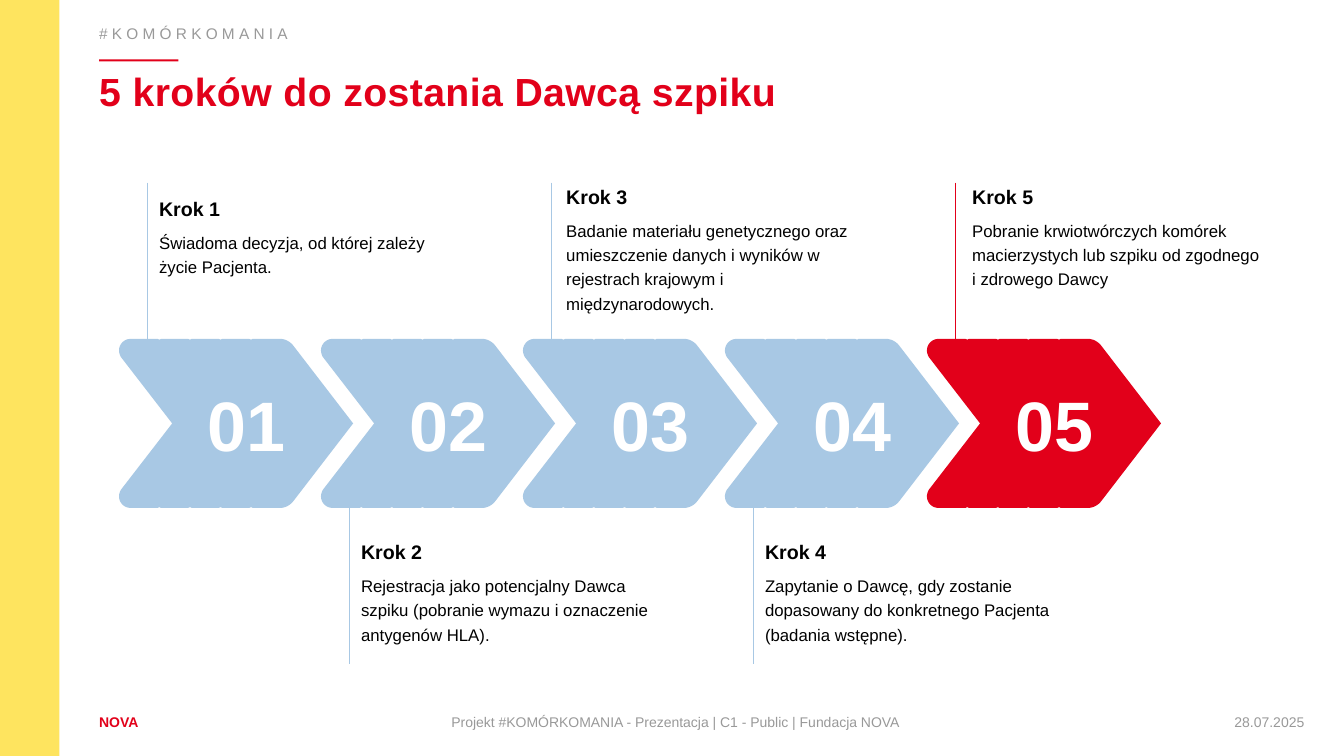
"""Build the slide with the five steps to becoming a marrow donor."""
from dataclasses import dataclass

from lxml import etree
from pptx import Presentation
from pptx import util as u
from pptx.dml.color import RGBColor
from pptx.enum import shapes, text
from pptx.oxml import ns


@dataclass(frozen=True)
class Theme:
    font: str = "Arial"
    yellow: str = "FEE45F"
    red: str = "E2001A"
    blue: str = "A8C8E4"
    grey: str = "999999"
    white: str = "FFFFFF"
    black: str = "000000"
    title: float = 28
    number: float = 50
    heading: float = 14
    body: float = 12
    eyebrow: float = 11
    footer: float = 10


T = Theme()
LEFT, TOP, HEIGHT, PITCH = 3.0, 8.54, 4.26, 5.09
STEM_X, STEM_LENGTH = 0.71, 3.94


def write(sp, lines, margins=(0, 0, 0, 0), anchor="TOP", align="LEFT"):
    """Fill a shape with (text, size, colour, bold) paragraphs."""
    tf = sp.text_frame
    tf.word_wrap = True
    tf.auto_size = text.MSO_AUTO_SIZE.NONE
    tf.vertical_anchor = text.MSO_ANCHOR[anchor]
    tf.margin_left, tf.margin_top, tf.margin_right, tf.margin_bottom = map(u.Cm, margins)
    for i, (words, size, colour, bold) in enumerate(lines):
        p = tf.add_paragraph() if i else tf.paragraphs[0]
        p.text = words
        p.alignment = text.PP_ALIGN[align]
        p.font.name, p.font.size, p.font.bold = T.font, u.Pt(size), bold
        p.font.color.rgb = RGBColor.from_string(colour)
    return tf.paragraphs


def paint(sp, colour):
    """Give a shape a plain fill without line or shadow."""
    sp.shadow.inherit = False
    sp.fill.solid()
    sp.fill.fore_color.rgb = RGBColor.from_string(colour)
    sp.line.fill.background()


prs = Presentation()
prs.slide_width, prs.slide_height = u.Cm(33.87), u.Cm(19.05)
s = prs.slides.add_slide(prs.slide_layouts[1])
s.background.fill.solid()
s.background.fill.fore_color.rgb = RGBColor.from_string(T.yellow)

title, eyebrow = s.shapes.title, s.placeholders[1]
panel = s.shapes.add_shape(shapes.MSO_SHAPE.RECTANGLE, u.Cm(1.5), 0, u.Cm(32.37), prs.slide_height)
paint(panel, T.white)
title.element.addprevious(panel.element)
accent = s.shapes.add_shape(shapes.MSO_SHAPE.RECTANGLE, u.Cm(2.5), u.Cm(1.5), u.Cm(2), u.Cm(0.05))
paint(accent, T.red)

for sp, box, line, spacing in (
    (title, (2.5, 1.9, 26.44, 2.1), ("5 kroków do zostania Dawcą szpiku", T.title, T.red, True), 30),
    (eyebrow, (2.5, 0.6, 14.68, 0.7), ("#KOMÓRKOMANIA", T.eyebrow, T.grey, False), 300),
):
    sp.left, sp.top, sp.width, sp.height = map(u.Cm, box)
    p = write(sp, [line])[0]
    p.space_before = u.Pt(0)
    p.runs[0]._r.get_or_add_rPr().set("spc", str(spacing))
title.text_frame.paragraphs[0].line_spacing = 0.83
pPr = eyebrow.text_frame.paragraphs[0]._p.get_or_add_pPr()
pPr.set("marL", "0")
pPr.set("indent", "0")
pPr.find(ns.qn("a:defRPr")).addprevious(etree.Element(ns.qn("a:buNone")))

for box, line, anchor, align in (
    ((2.5, 17.93, 6.45, 0.5), ("NOVA", T.footer, T.red, True), "MIDDLE", "LEFT"),
    ((4.17, 17.98, 25.7, 0.79),
     ("Projekt #KOMÓRKOMANIA - Prezentacja | C1 - Public | Fundacja NOVA", T.footer, T.grey, False), "TOP", "CENTER"),
    ((29.87, 17.98, 3, 0.79), ("28.07.2025", T.footer, T.grey, False), "TOP", "RIGHT"),
):
    write(s.shapes.add_textbox(*map(u.Cm, box)), [line], anchor=anchor, align=align)

upper = [(1.34, HEIGHT / 2)]
for curve in (
    ((0.05, 0.46), (0.03, 0.43), (0, 0.36), (0, 0.29)),
    ((0, 0.29), (0, 0.13), (0.13, 0), (0.29, 0)),
    ((4.06, 0), (4.19, 0), (4.32, 0.07), (4.4, 0.18)),
):
    if curve[0][1] == 0:
        for k in range(4):
            seam = 1.02 + 0.77 * k
            upper += [(seam - 0.05, 0), (seam, 0.02), (seam + 0.04, 0)]
    for step in range(9):
        t = step / 8
        weights = ((1 - t) ** 3, 3 * t * (1 - t) ** 2, 3 * t * t * (1 - t), t ** 3)
        upper.append(tuple(sum(w * point[axis] for w, point in zip(weights, curve)) for axis in (0, 1)))
upper.append((5.9, HEIGHT / 2))
outline = [(x * 1000, y * 1000) for x, y in upper + [(x, HEIGHT - y) for x, y in upper[-2:0:-1]]]

steps = (
    ("Świadoma decyzja, od której zależy życie Pacjenta.", 0, 4.29, 1.55),
    ("Rejestracja jako potencjalny Dawca szpiku (pobranie wymazu i oznaczenie antygenów HLA).", 0, 12.88, 0),
    ("Badanie materiału genetycznego oraz umieszczenie danych i wyników w rejestrach krajowym i międzynarodowych.",
     0.08, 4.37, 0.71),
    ("Zapytanie o Dawcę, gdy zostanie dopasowany do konkretnego Pacjenta (badania wstępne).", 0, 12.88, 0),
    ("Pobranie krwiotwórczych komórek macierzystych lub szpiku od zgodnego i zdrowego Dawcy", 0.13, 4.6, 1.55),
)
for i, (description, shift, top, bottom_margin) in enumerate(steps):
    x = LEFT + i * PITCH
    colour = T.red if i == len(steps) - 1 else T.blue
    above = i % 2 == 0

    builder = s.shapes.build_freeform(*outline[0], scale=u.Cm(1) / 1000)
    builder.add_line_segments(outline[1:], close=True)
    chevron = builder.convert_to_shape(u.Cm(x), u.Cm(TOP))
    paint(chevron, colour)
    write(chevron, [(f"{i + 1:02}", T.number, T.white, True)], (0.79, 0.13, 0.25, 0.13), "MIDDLE", "CENTER")

    label = s.shapes.add_textbox(u.Cm(x + STEM_X + shift), u.Cm(top), u.Cm(7.62), u.Cm(4.24))
    margins = (0.3, 0, 0, bottom_margin) if above else (0.3, 0.61, 0, 0)
    lines = [(f"Krok {i + 1}", T.heading, T.black, True), (description, T.body, T.black, False)]
    for p in write(label, lines, margins, "BOTTOM" if above else "TOP"):
        p.line_spacing = 1.2
        p.space_after = u.Pt(6)

    stem_top = TOP - STEM_LENGTH if above else TOP + HEIGHT
    stem = s.shapes.add_connector(
        shapes.MSO_CONNECTOR.STRAIGHT,
        u.Cm(x + STEM_X), u.Cm(stem_top), u.Cm(x + STEM_X), u.Cm(stem_top + STEM_LENGTH))
    stem.line.color.rgb = RGBColor.from_string(colour)
    stem.line.width = u.Pt(0.75)
    etree.SubElement(stem.element.spPr, ns.qn("a:effectLst"))

prs.save("out.pptx")
